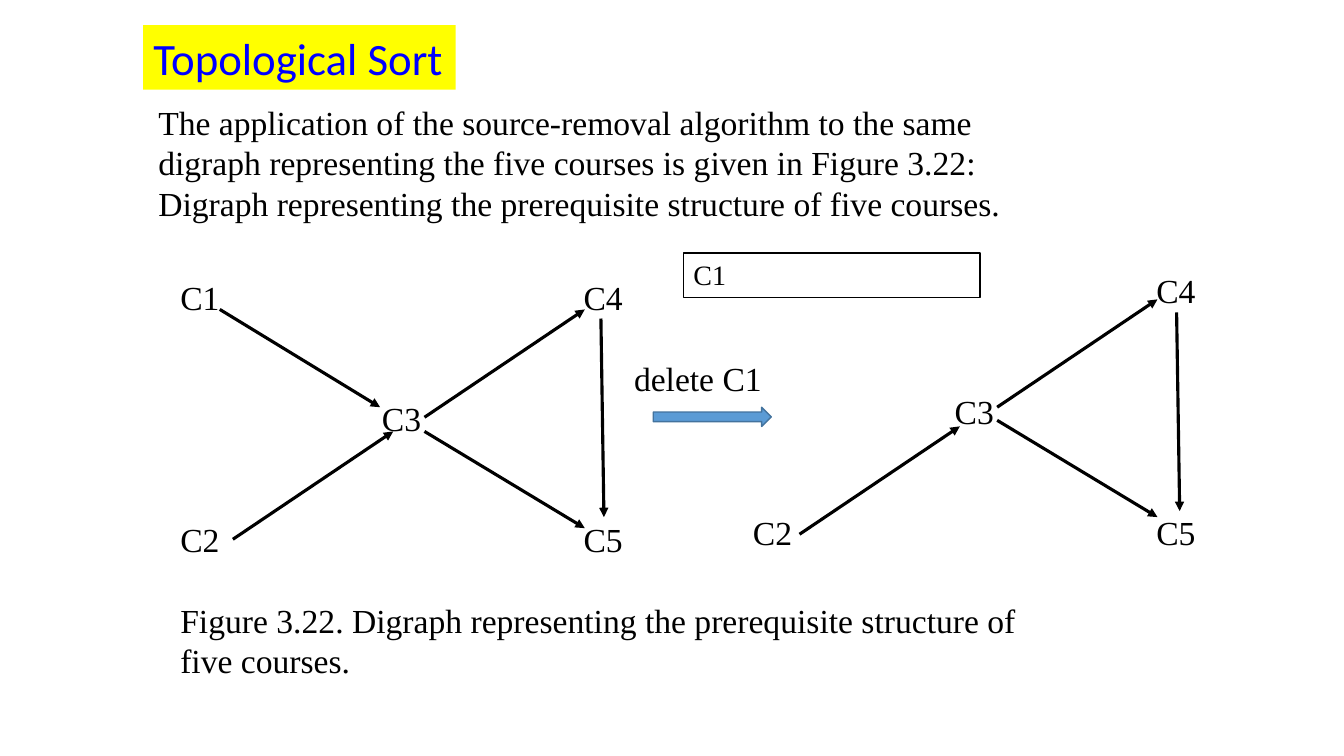
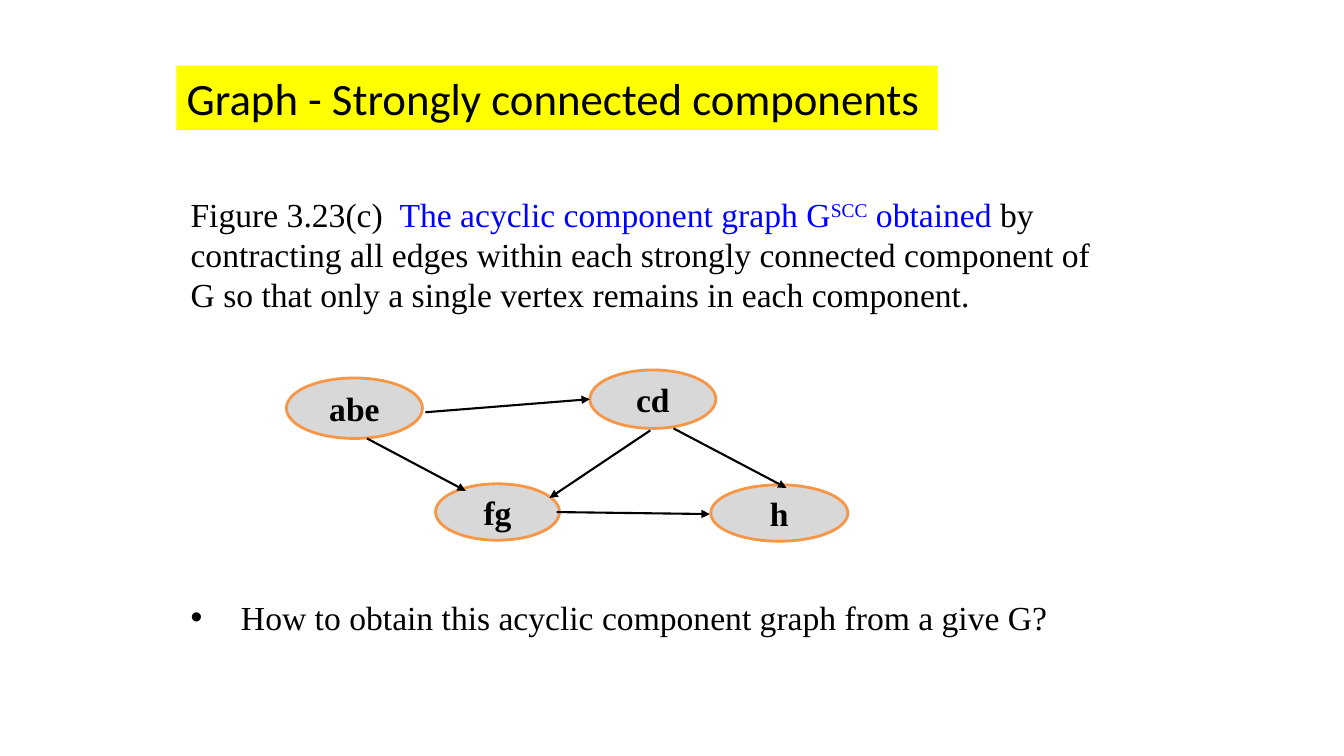
from dataclasses import dataclass

from lxml.etree import SubElement
from pptx import Presentation
from pptx.dml.color import RGBColor
from pptx.enum.shapes import MSO_CONNECTOR, MSO_SHAPE
from pptx.enum.text import MSO_ANCHOR, MSO_AUTO_SIZE, PP_ALIGN
from pptx.oxml.ns import qn
from pptx.util import Inches, Pt

COLORS = {
    "black": "000000", "white": "FFFFFF", "blue": "0000FF", "yellow": "FFFF00",
    "grey": "D8D8D8", "orange": "F79646", "arrow": "5B9BD5", "edge": "43739E",
}
SERIF = "Times New Roman"
LEAD = 1.2
ROW = 24 * LEAD / 72
COL = 1


@dataclass
class Box:
    left: float
    top: float
    width: float
    height: float

    def place(self) -> tuple:
        return tuple(Inches(v) for v in (self.left, self.top, self.width, self.height))


@dataclass
class Run:
    text: str
    color: str = "black"
    size: int = 24
    face: str = SERIF
    bold: bool = False
    base: int = 0


@dataclass
class Edge:
    x1: float
    y1: float
    x2: float
    y2: float


@dataclass
class Node:
    text: str
    col: int
    row: int


@dataclass
class Graph:
    left: float
    top: float
    nodes: list[Node]
    edges: list[Edge]


@dataclass
class Oval:
    text: str
    box: Box


C1 = Node("C1", 0, 0)
OTHERS = [Node("C2", 0, 6), Node("C3", 2, 3), Node("C4", 4, 0), Node("C5", 4, 6)]
GRAPHS = [
    Graph(1.69, 2.7, [C1, *OTHERS], [
        Edge(2.18, 3.07, 3.77, 4.04), Edge(4.21, 4.28, 5.8, 5.24),
        Edge(4.21, 4.14, 5.8, 3.07), Edge(2.31, 5.35, 3.9, 4.28),
        Edge(5.96, 3.16, 5.99, 5.13),
    ]),
    Graph(7.37, 2.63, OTHERS, [
        Edge(11.67, 3.1, 11.7, 5.07), Edge(9.89, 4.04, 11.48, 2.97),
        Edge(7.93, 5.3, 9.52, 4.23), Edge(9.89, 4.17, 11.48, 5.13),
    ]),
]
OVALS = [
    Oval("abe", Box(2.84, 3.75, 1.35, 0.6)),
    Oval("fg", Box(4.32, 4.8, 1.23, 0.56)),
    Oval("h", Box(7.05, 4.81, 1.36, 0.56)),
    Oval("cd", Box(5.85, 3.67, 1.25, 0.58)),
]
LINKS = [
    Edge(6.68, 4.25, 7.8, 4.84), Edge(6.45, 4.27, 5.45, 4.94),
    Edge(4.22, 4.09, 5.85, 3.96), Edge(3.64, 4.35, 4.62, 4.87),
    Edge(5.52, 5.08, 7.04, 5.1),
]


def tint(name: str) -> RGBColor:
    return RGBColor.from_string(COLORS[name])


def assign(target, values: dict) -> None:
    for key, value in values.items():
        setattr(target, key, value)


def paint(shape, fill: str, line: str | None = None, width: float = 1) -> None:
    shape.fill.solid()
    shape.fill.fore_color.rgb = tint(fill)
    if line:
        shape.line.color.rgb = tint(line)
        shape.line.width = Pt(width)
    else:
        shape.line.fill.background()


def fit(shape, anchor=MSO_ANCHOR.TOP) -> None:
    assign(shape.text_frame, {
        "word_wrap": True,
        "auto_size": MSO_AUTO_SIZE.NONE,
        "vertical_anchor": anchor,
    })


def move(shape, box: Box) -> None:
    assign(shape, dict(zip(("left", "top", "width", "height"), box.place())))


def write(para, runs: list[Run], align=PP_ALIGN.LEFT, before: float = 0,
          bullet: bool = False) -> None:
    props = para._p.get_or_add_pPr()
    indent = Inches(0.5) if bullet else 0
    props.set("marL", str(indent))
    props.set("indent", str(-indent))
    if bullet:
        SubElement(props, qn("a:buFont")).set("typeface", "Arial")
        SubElement(props, qn("a:buChar")).set("char", "•")
    else:
        SubElement(props, qn("a:buNone"))
    assign(para, {
        "alignment": align,
        "space_before": Pt(before),
        "line_spacing": Pt(runs[0].size * LEAD),
    })
    for item in runs:
        run = para.add_run()
        run.text = item.text
        assign(run.font, {"name": item.face, "size": Pt(item.size), "bold": item.bold})
        run.font.color.rgb = tint(item.color)
        if item.base:
            run._r.get_or_add_rPr().set("baseline", str(item.base * 1000))


def start(deck, title: str, color: str, band: Box, body: Box, runs: list[Run]):
    """Add a slide with its title band and opening paragraph."""
    slide = deck.slides.add_slide(deck.slide_layouts[1])
    head, main = slide.shapes.title, slide.placeholders[1]
    move(head, band)
    paint(head, "yellow")
    move(main, body)
    for shape in (head, main):
        fit(shape)
    write(head.text_frame.paragraphs[0], [Run(title, color, 32, "Calibri")])
    write(main.text_frame.paragraphs[0], runs)
    return slide


def label(slide, text: str, box: Box) -> None:
    shape = slide.shapes.add_textbox(*box.place())
    fit(shape)
    write(shape.text_frame.paragraphs[0], [Run(text)])


def block(slide, kind, box: Box, fill: str, line: str, width: float):
    shape = slide.shapes.add_shape(kind, *box.place())
    shape.shadow.inherit = False
    paint(shape, fill, line, width)
    return shape


def arrow(slide, edge: Edge, width: float) -> None:
    ends = (Inches(v) for v in (edge.x1, edge.y1, edge.x2, edge.y2))
    line = slide.shapes.add_connector(MSO_CONNECTOR.STRAIGHT, *ends)
    line.line.color.rgb = tint("black")
    line.line.width = Pt(width)
    SubElement(line.line._get_or_add_ln(), qn("a:tailEnd")).set("type", "triangle")
    SubElement(line._element.spPr, qn("a:effectLst"))


def sort_slide(deck) -> None:
    slide = start(
        deck, "Topological Sort", "blue",
        Box(1.42, 0.25, 3.1, 0.64), Box(1.47, 0.96, 9.04, 1.31),
        [Run("The application of the source-removal algorithm to the same digraph "
             "representing the five courses is given in Figure 3.22: Digraph "
             "representing the prerequisite structure of five courses.")])
    for graph in GRAPHS:
        for node in graph.nodes:
            label(slide, node.text, Box(graph.left + node.col * COL,
                                        graph.top + node.row * ROW, 0.7, 0.5))
        for edge in graph.edges:
            arrow(slide, edge, 2.25)
    first = GRAPHS[0]
    label(slide, "delete C1", Box(6.19, first.top + 2 * ROW, 1.6, 0.5))
    label(slide, "Figure 3.22. Digraph representing the prerequisite structure of "
          "five courses.", Box(first.left, first.top + 8 * ROW, 9.04, 0.9))
    block(slide, MSO_SHAPE.RIGHT_ARROW, Box(6.48, 4.04, 1.17, 0.19), "arrow", "edge", 1)
    queue = block(slide, MSO_SHAPE.RECTANGLE, Box(6.78, 2.51, 2.94, 0.44),
                  "white", "black", 1)
    fit(queue)
    write(queue.text_frame.paragraphs[0], [Run("C1", size=20)])


def parts_slide(deck) -> None:
    slide = start(
        deck, "Graph - Strongly connected components", "black",
        Box(1.75, 0.65, 7.55, 0.64), Box(1.79, 1.87, 9.31, 4.54),
        [Run("Figure 3.23(c)  "),
         Run("The acyclic component graph G", "blue"),
         Run("SCC", "blue", base=30),
         Run(" obtained ", "blue"),
         Run("by contracting all edges within each strongly connected component of "
             "G so that only a single vertex remains in each component.")])
    write(slide.placeholders[1].text_frame.add_paragraph(),
          [Run("How to obtain this acyclic component graph from a give G?")],
          before=7 * ROW * 72, bullet=True)
    for oval in OVALS:
        shape = block(slide, MSO_SHAPE.OVAL, oval.box, "grey", "orange", 2)
        fit(shape, MSO_ANCHOR.MIDDLE)
        write(shape.text_frame.paragraphs[0], [Run(oval.text, bold=True)],
              PP_ALIGN.CENTER)
    for link in LINKS:
        arrow(slide, link, 1.5)


def main() -> None:
    deck = Presentation()
    deck.slide_width, deck.slide_height = Inches(13.33), Inches(7.5)
    sort_slide(deck)
    parts_slide(deck)
    deck.save("out.pptx")


if __name__ == "__main__":
    main()
